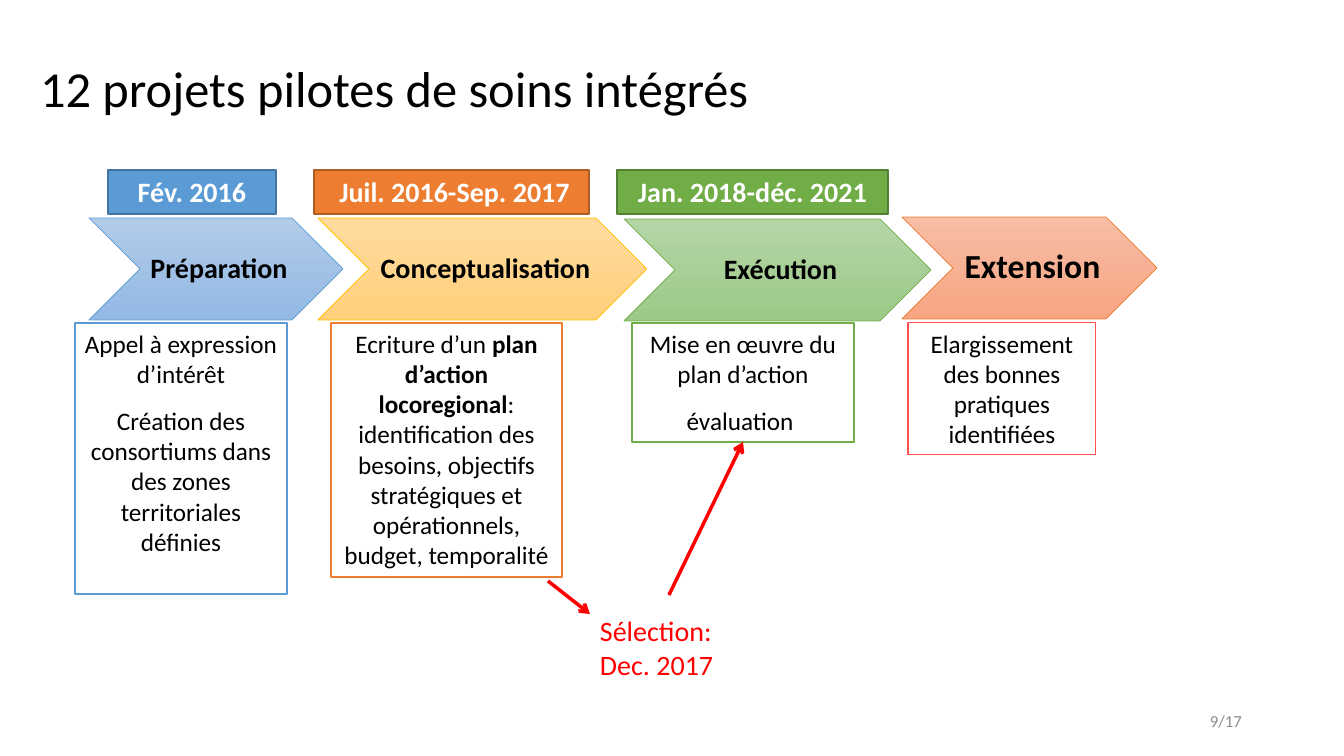
"""Build the slide on the phases of the integrated care pilot projects."""
from lxml import etree
from pptx import Presentation
from pptx import util as u
from pptx.dml.color import RGBColor
from pptx.enum import shapes, text
from pptx.oxml.ns import qn

PX = 914400 / 100.8
FONT = "Calibri"
RED = "FF0000"
CENTER = text.PP_ALIGN.CENTER
LEFT = text.PP_ALIGN.LEFT
TOP = text.MSO_ANCHOR.TOP
MIDDLE = text.MSO_ANCHOR.MIDDLE
FIT = text.MSO_AUTO_SIZE.SHAPE_TO_FIT_TEXT
FIXED = text.MSO_AUTO_SIZE.NONE

PHASES = [
    ("Préparation", 20, (89, 218, 254), "B1CBE9", "93B9E4", "5B9BD5"),
    ("Conceptualisation", 20, (318, 218, 329), "FFDB9E", "FFD07C", "FFC000"),
    ("Exécution", 20, (624, 219, 307), "B5D5A7", "9CC987", "70AD47"),
    ("Extension", 24, (902, 217, 255), "F7BDA5", "F8A582", "ED7D31"),
]
DATES = [
    ("Fév. 2016", (108, 170, 168, 44), "5B9BD5", "43739E"),
    (" Juil. 2016-Sep. 2017", (314, 170, 275, 44), "ED7D31", "AF5C24"),
    ("Jan. 2018-déc. 2021", (617, 170, 271, 44), "70AD47", "538035"),
]
DETAILS = [
    ([["Appel à expression d’intérêt"],
      ["Création des consortiums dans des zones territoriales définies"]],
     (75, 323, 212, 271), "5B9BD5", 1),
    ([["Ecriture d’un ", "plan d’action locoregional",
       ": identification des besoins, objectifs stratégiques et "
       "opérationnels, budget, temporalité"]],
     (331, 323, 231, 254), "ED7D31", 1),
    ([["Mise en œuvre du plan d’action"], ["évaluation "]],
     (632, 323, 222, 119), "70AD47", 1),
    ([["Elargissement des bonnes pratiques identifiées"]],
     (908, 323, 188, 132), "FF5050", 0.75),
]


def px(n):
    """Turn pixels into EMU."""
    return u.Emu(round(n * PX))


def rgb(color):
    """Turn a hex string into a colour."""
    return RGBColor.from_string(color)


def write(tf, paragraphs, size, color="000000", bold=None, align=CENTER,
          anchor=TOP, fit=FIT):
    """Fill a text frame; every second run of a paragraph is bold."""
    tf.word_wrap = True
    tf.auto_size = fit
    tf.vertical_anchor = anchor
    for i, runs in enumerate(paragraphs):
        p = tf.add_paragraph() if i else tf.paragraphs[0]
        p.alignment = align
        if i:
            p.space_before = u.Pt(6)
        if i < len(paragraphs) - 1:
            p.space_after = u.Pt(6)
        for j, words in enumerate(runs):
            r = p.add_run()
            r.text = words
            if j % 2:
                r.font.bold = True
        p.font.name = FONT
        p.font.size = u.Pt(size)
        p.font.bold = bold
        p.font.color.rgb = rgb(color)


def add_text(parent, box, words, size, **style):
    """Add a text box with one paragraph."""
    sp = parent.add_textbox(*map(px, box))
    write(sp.text_frame, [[words]], size, **style)
    return sp


def add_box(s, box, line, width, fill=None):
    """Add an outlined rectangle."""
    sp = s.shapes.add_shape(shapes.MSO_SHAPE.RECTANGLE, *map(px, box))
    sp.shadow.inherit = False
    if fill:
        sp.fill.solid()
        sp.fill.fore_color.rgb = rgb(fill)
    else:
        sp.fill.background()
    sp.line.color.rgb = rgb(line)
    sp.line.width = u.Pt(width)
    return sp


def add_phase(group, name, size, place, light, dark, line):
    """Add a gradient chevron and its label."""
    x, y, w = place
    h = 102
    sp = group.shapes.add_shape(
        shapes.MSO_SHAPE.CHEVRON, *map(px, (x, y, w, h)))
    sp.shadow.inherit = False
    sp.fill.gradient()
    sp.fill.gradient_angle = 270
    for stop, color in zip(sp.fill.gradient_stops, (light, dark)):
        stop.color.rgb = rgb(color)
    sp.line.color.rgb = rgb(line)
    sp.line.width = u.Pt(0.5)
    label = add_text(group.shapes, (x + h // 2, y, w - h, h), name, size,
                     bold=True, anchor=MIDDLE, fit=FIXED)
    tf = label.text_frame
    tf.margin_left = px(9)
    tf.margin_top = tf.margin_right = tf.margin_bottom = px(3)
    tf.paragraphs[0].line_spacing = 0.9


def add_arrow(s, start, end):
    """Add a red arrow."""
    c = s.shapes.add_connector(
        shapes.MSO_CONNECTOR.STRAIGHT, *map(px, start + end))
    c.line.color.rgb = rgb(RED)
    c.line.width = u.Pt(2.5)
    etree.SubElement(c.line._get_or_add_ln(), qn("a:tailEnd"), type="arrow")
    etree.SubElement(c._element.spPr, qn("a:effectLst"))
    return c


def add_title(s, words):
    """Place and format the title."""
    sp = s.shapes.title
    sp.left, sp.top, sp.width, sp.height = map(px, (30, 18, 1159, 146))
    write(sp.text_frame, [[words]], 36, align=LEFT, anchor=MIDDLE, fit=FIXED)
    sp.text_frame.paragraphs[0].line_spacing = 0.9


def main():
    """Build and save the slide."""
    prs = Presentation()
    prs.slide_width, prs.slide_height = px(1344), px(756)
    s = prs.slides.add_slide(prs.slide_layouts[5])
    add_title(s, "12 projets pilotes de soins intégrés")
    group = s.shapes.add_group_shape()
    for phase in PHASES:
        add_phase(group, *phase)
    boxes = []
    for paragraphs, box, line, width in DETAILS:
        sp = add_box(s, box, line, width)
        write(sp.text_frame, paragraphs, 18)
        boxes.append(sp)
    for date, box, fill, line in DATES:
        sp = add_box(s, box, line, 1, fill)
        write(sp.text_frame, [[date]], 20, color="FFFFFF", bold=True)
    add_text(s.shapes, (950, 701, 302, 40), "9/17", 12, color="8C8C8C",
             align=text.PP_ALIGN.RIGHT, anchor=MIDDLE, fit=FIXED)
    add_text(s.shapes, (590, 609, 171, 78), "Sélection: Dec. 2017", 20,
             color=RED, align=LEFT)
    add_arrow(s, (548, 581), (590, 614))
    add_arrow(s, (669, 595), (743, 442)).end_connect(boxes[2], 2)
    prs.save("out.pptx")


if __name__ == "__main__":
    main()
